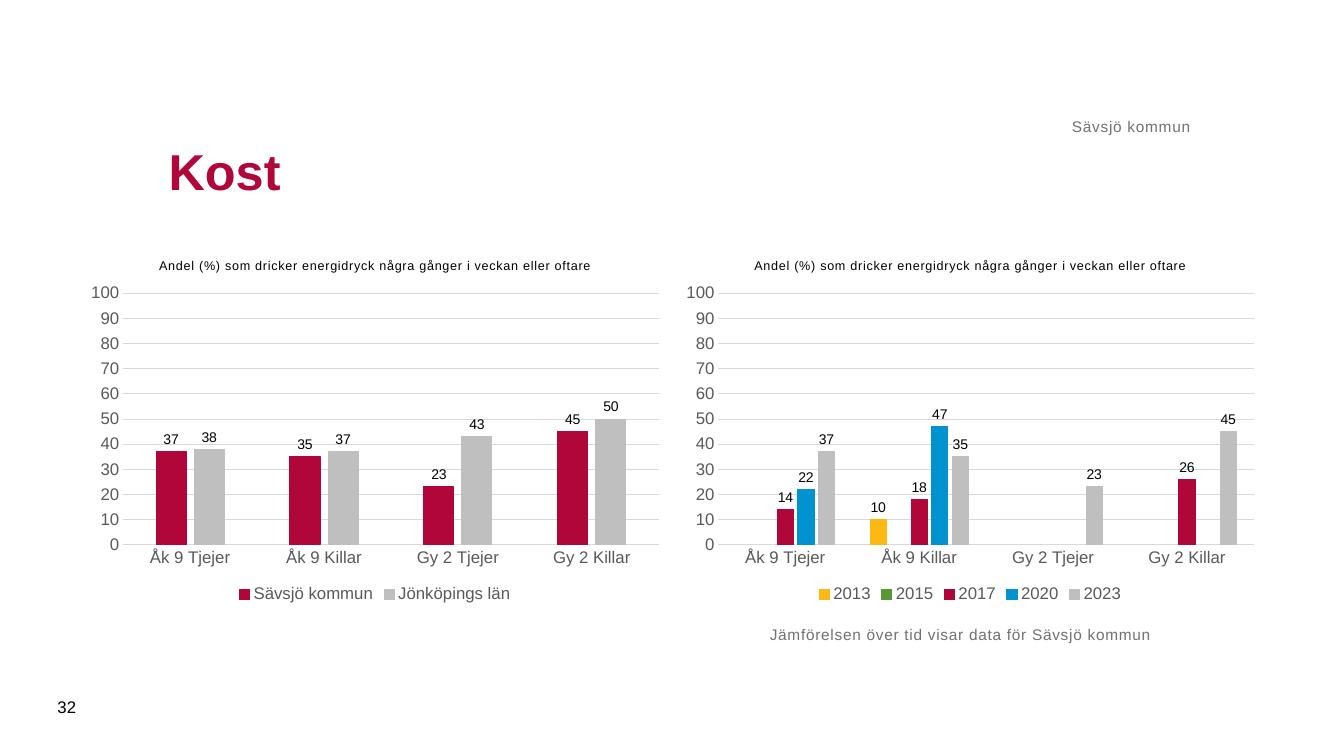
from pptx import Presentation
from pptx.chart.data import CategoryChartData
from pptx.dml.color import RGBColor
from pptx.enum.chart import XL_CHART_TYPE, XL_LABEL_POSITION, XL_LEGEND_POSITION, XL_TICK_MARK
from pptx.enum.text import MSO_ANCHOR, PP_ALIGN
from pptx.util import Cm, Pt

CLUSTERED = XL_CHART_TYPE.COLUMN_CLUSTERED
OUTSIDE_END = XL_LABEL_POSITION.OUTSIDE_END
LEGEND_BOTTOM = XL_LEGEND_POSITION.BOTTOM
NO_TICK = XL_TICK_MARK.NONE
TOP, MIDDLE, BOTTOM = MSO_ANCHOR.TOP, MSO_ANCHOR.MIDDLE, MSO_ANCHOR.BOTTOM
LEFT, RIGHT = PP_ALIGN.LEFT, PP_ALIGN.RIGHT

RED, GREY, YELLOW, GREEN, BLUE = "B1063A", "BFBFBF", "FDB913", "579835", "0093D0"
BLACK, AXIS_TEXT, CAPTION, GRID = "000000", "595959", "717171", "D9D9D9"
NUMBER_FORMAT = "#,##0;#,##0"
GROUPS = ["Åk 9 Tjejer", "Åk 9 Killar", "Gy 2 Tjejer", "Gy 2 Killar"]
QUESTION = "Andel (%) som dricker energidryck några gånger i veckan eller oftare"
COUNTY_SERIES = [
    ("Sävsjö kommun", [37, 35, 23, 45], RED),
    ("Jönköpings län", [38, 37, 43, 50], GREY),
]
YEAR_SERIES = [
    ("2013", [None, 10, None, None], YELLOW),
    ("2015", [None, None, None, None], GREEN),
    ("2017", [14, 18, None, 26], RED),
    ("2020", [22, 47, None, None], BLUE),
    ("2023", [37, 35, 23, 45], GREY),
]


def color(hex_string):
    return RGBColor.from_string(hex_string)


class SlideBuilder:
    font_name = "Arial"

    def __init__(self, slide):
        self.slide = slide

    def style_font(self, font, size, hex_string, bold=False):
        font.name = self.font_name
        font.size = Pt(size)
        font.bold = bold
        font.color.rgb = color(hex_string)

    def add_run(self, paragraph, text, size, hex_string, bold=False, spacing=0):
        """Spacing is the extra gap between letters, in points."""
        run = paragraph.add_run()
        run.text = text
        self.style_font(run.font, size, hex_string, bold)
        if spacing:
            run._r.get_or_add_rPr().set("spc", str(round(spacing * 100)))

    def style_frame(self, frame, anchor, inset):
        frame.word_wrap = True
        frame.vertical_anchor = anchor
        if not inset:
            frame.margin_left = frame.margin_right = 0
            frame.margin_top = frame.margin_bottom = 0

    def add_text(self, box, text, size, hex_string, anchor=TOP, align=LEFT,
                 bold=False, spacing=0, inset=False):
        shape = self.slide.shapes.add_textbox(*map(Cm, box))
        self.style_frame(shape.text_frame, anchor, inset)
        paragraph = shape.text_frame.paragraphs[0]
        paragraph.alignment = align
        self.add_run(paragraph, text, size, hex_string, bold, spacing)

    def style_axes(self, chart):
        category_axis, value_axis = chart.category_axis, chart.value_axis
        for axis in (category_axis, value_axis):
            axis.major_tick_mark = axis.minor_tick_mark = NO_TICK
            self.style_font(axis.tick_labels.font, 12, AXIS_TEXT)
        value_axis.minimum_scale, value_axis.maximum_scale = 0, 100
        value_axis.major_unit = 10
        value_axis.tick_labels.number_format = NUMBER_FORMAT
        value_axis.tick_labels.number_format_is_linked = False
        value_axis.format.line.fill.background()
        for line in (category_axis.format.line, value_axis.major_gridlines.format.line):
            line.color.rgb = color(GRID)
            line.width = Pt(0.75)

    def style_series(self, series, hex_string):
        series.invert_if_negative = False
        series.format.fill.solid()
        series.format.fill.fore_color.rgb = color(hex_string)
        series.format.line.color.rgb = color(hex_string)
        series.format.line.width = Pt(0.75)
        labels = series.data_labels
        labels.show_value = True
        labels.position = OUTSIDE_END
        labels.number_format = NUMBER_FORMAT
        labels.number_format_is_linked = False
        self.style_font(labels.font, 10, BLACK)

    def add_column_chart(self, box, title, categories, series_rows):
        data = CategoryChartData()
        data.categories = categories
        for name, values, _ in series_rows:
            data.add_series(name, values)
        chart = self.slide.shapes.add_chart(CLUSTERED, *map(Cm, box), data).chart
        self.style_font(chart.font, 10, BLACK)
        chart.has_title = True
        self.add_run(chart.chart_title.text_frame.paragraphs[0], title, 9, BLACK, spacing=0.5)
        chart.chart_title.include_in_layout = False
        chart.has_legend = True
        chart.legend.position = LEGEND_BOTTOM
        chart.legend.include_in_layout = False
        self.style_font(chart.legend.font, 12, AXIS_TEXT)
        self.style_axes(chart)
        plot = chart.plots[0]
        plot.gap_width, plot.overlap = 219, -27
        plot.vary_by_categories = False
        for series, (_, _, hex_string) in zip(plot.series, series_rows):
            self.style_series(series, hex_string)


def main():
    presentation = Presentation()
    presentation.slide_width, presentation.slide_height = Cm(33.87), Cm(19.05)
    builder = SlideBuilder(presentation.slides.add_slide(presentation.slide_layouts[6]))

    for left, series_rows in ((2, COUNTY_SERIES), (17, YEAR_SERIES)):
        builder.add_column_chart((left, 6.1, 14.9, 9.2), QUESTION, GROUPS, series_rows)

    builder.add_text((4, 2.5, 26, 3.6), "Kost", 36, RED, MIDDLE, bold=True, inset=True)
    builder.add_text((19.4, 15.75, 13.5, 2.4),
                     "Jämförelsen över tid visar data för Sävsjö kommun", 11, CAPTION, spacing=0.5)
    builder.add_text((4, 1.57, 26, 1.86), "Sävsjö kommun", 11, CAPTION, BOTTOM, RIGHT, spacing=0.5)
    builder.add_text((1.2, 17.3, 1.45, 1.02), "32", 12, BLACK, MIDDLE, inset=True)

    presentation.save("out.pptx")


if __name__ == "__main__":
    main()
